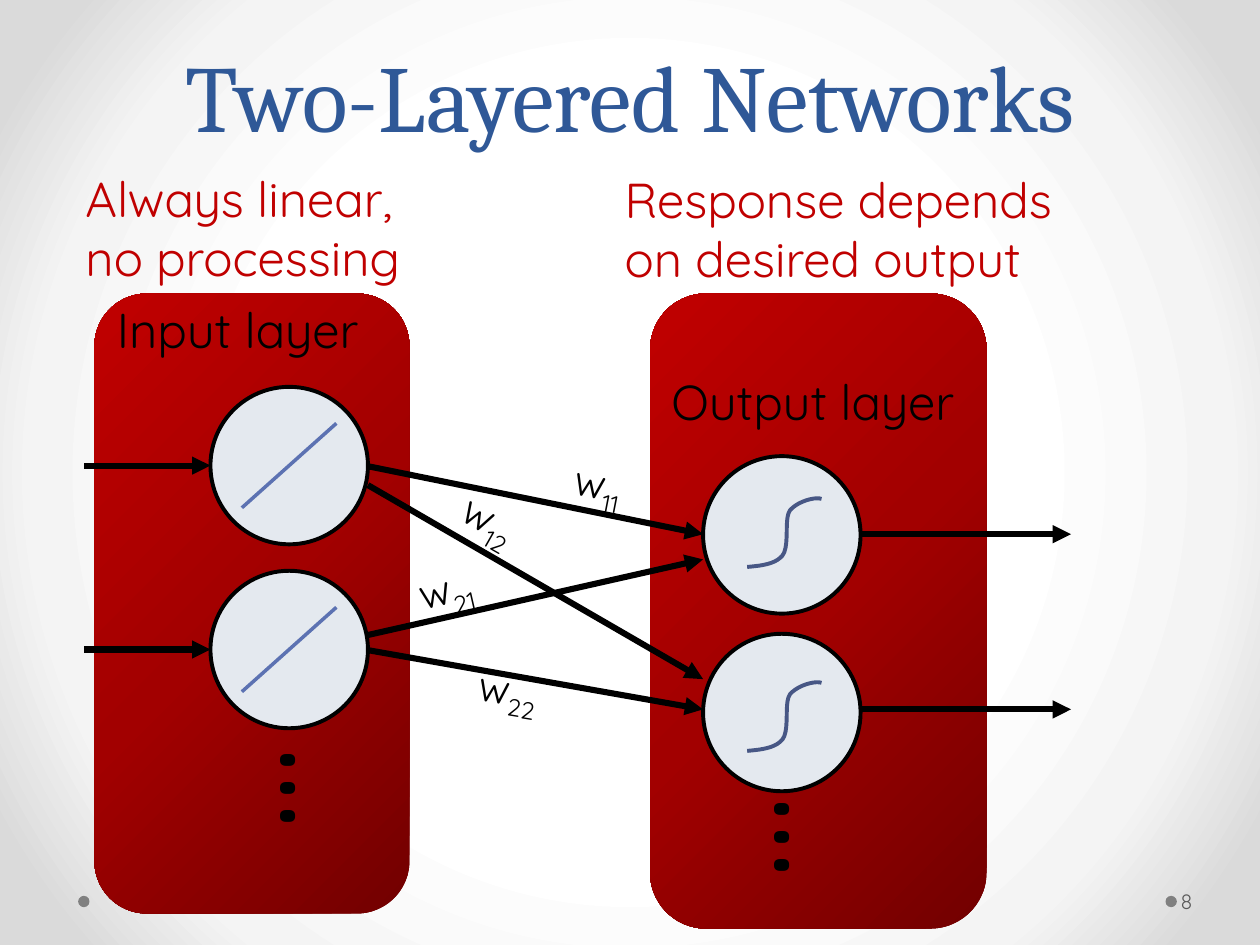
"""Build the slide on two-layered neural networks."""
from lxml.etree import SubElement
from pptx import Presentation
from pptx.dml.color import RGBColor
from pptx.enum.shapes import MSO_CONNECTOR as CXN, MSO_SHAPE as SHAPE
from pptx.enum.text import MSO_ANCHOR as ANCHOR, MSO_AUTO_SIZE as AUTO, PP_ALIGN as ALIGN
from pptx.oxml import parse_xml
from pptx.oxml.ns import nsdecls, qn
from pptx.util import Inches, Pt

COLORS = {
    "title": "2F5897", "accent": "C00000", "text": "000000", "number": "595959",
    "dot": "808080", "node": "E4E9EF", "linear": "5C72B2", "sigmoid": "475785",
}
PANEL_STOPS = [(0, "720000"), (50, "A20000"), (100, "C00000")]
PAGE_STOPS = [(50, "FFFFFF"), (76, "F4F4F4"), (92, "DADADA")]
PANEL_DIRECTION = '<a:lin ang="13500000" scaled="0"/>'
PAGE_DIRECTION = ('<a:path path="circle"><a:fillToRect l="50000" t="50000" '
                  'r="50000" b="50000"/></a:path>')
HEADING = {"name": "Cambria", "size": Pt(54)}
LABEL = {"name": "Quicksand", "size": Pt(28)}
WEIGHT = {"name": "Quicksand", "size": Pt(24)}
ELLIPSIS = {"name": "Quicksand", "size": Pt(88)}
NUMBER = {"name": "Quicksand", "size": Pt(12)}
NODE = 1.25
INPUT_X, OUTPUT_X = 1.67, 5.58
INPUT_TOPS, OUTPUT_TOPS = (3.07, 4.53), (3.62, 5.03)
SIGMOID_TOPS = (3.96, 5.42)
SIGMOID = [
    [(0, 0.54), (0.11, 0.53), (0.22, 0.52), (0.28, 0.45)],
    [(0.28, 0.45), (0.34, 0.37), (0.29, 0.16), (0.34, 0.09)],
    [(0.34, 0.09), (0.4, 0.02), (0.54, -0.02), (0.59, 0)],
]


def rgb(name):
    """Return the named colour."""
    return RGBColor.from_string(COLORS[name])


def gradient(stops, direction):
    """Return a gradient fill element."""
    marks = "".join(f'<a:gs pos="{pos * 1000}"><a:srgbClr val="{color}"/></a:gs>'
                    for pos, color in stops)
    return parse_xml(f'<a:gradFill {nsdecls("a")} rotWithShape="1">'
                     f'<a:gsLst>{marks}</a:gsLst>{direction}</a:gradFill>')


def set_background(s):
    """Give the slide a radial background."""
    s.background.fill.solid()
    bg_pr = s.background.fill._xPr
    bg_pr.replace(bg_pr.find(qn("a:solidFill")), gradient(PAGE_STOPS, PAGE_DIRECTION))


def add_run(p, text, fmt, color):
    """Add a formatted run to a paragraph."""
    r = p.add_run()
    r.text = text
    for key, value in fmt.items():
        setattr(r.font, key, value)
    r.font.color.rgb = rgb(color)
    return r


def add_title(s, text):
    """Fill and place the title placeholder."""
    sp = s.shapes.title
    sp.left, sp.top, sp.width, sp.height = map(Inches, (0.5, 0, 9, 1.25))
    tf = sp.text_frame
    tf.vertical_anchor = ANCHOR.BOTTOM
    p = tf.paragraphs[0]
    p.alignment, p.line_spacing = ALIGN.CENTER, Pt(58)
    add_run(p, text, HEADING, "title")


def add_text(s, box, text, fmt, color="text", rotation=0, sub=""):
    """Add a text box, with an optional subscript."""
    sp = s.shapes.add_textbox(*map(Inches, box))
    sp.rotation = rotation
    tf = sp.text_frame
    tf.word_wrap, tf.auto_size = True, AUTO.SHAPE_TO_FIT_TEXT
    p = tf.paragraphs[0]
    add_run(p, text, fmt, color)
    if sub:
        r = add_run(p, sub, fmt, color)
        r.font._element.set("baseline", "-25000")
    return tf


def add_page_number(s, text):
    """Add the page number."""
    tf = add_text(s, (9.34, 6.95, 0.61, 0.4), text, NUMBER, "number")
    tf.auto_size, tf.vertical_anchor = AUTO.NONE, ANCHOR.MIDDLE
    tf.margin_left, tf.margin_right = Inches(0.03), Inches(0.05)


def add_panel(s, box):
    """Add a rounded layer panel with a gradient."""
    sp = s.shapes.add_shape(SHAPE.ROUNDED_RECTANGLE, *map(Inches, box))
    sp.shadow.inherit = False
    sp.line.fill.background()
    sp.fill.solid()
    sp_pr = sp._element.spPr
    sp_pr.replace(sp_pr.find(qn("a:solidFill")), gradient(PANEL_STOPS, PANEL_DIRECTION))


def add_circle(s, x, y, size, fill, outlined=False):
    """Add a filled circle."""
    sp = s.shapes.add_shape(SHAPE.OVAL, *map(Inches, (x, y, size, size)))
    sp.shadow.inherit = False
    sp.fill.solid()
    sp.fill.fore_color.rgb = rgb(fill)
    if outlined:
        sp.line.color.rgb, sp.line.width = rgb("text"), Pt(2.25)
    else:
        sp.line.fill.background()


def add_line(s, start, end, color="text", width=3.5, arrow=True):
    """Add a straight line, with an arrowhead by default."""
    cxn = s.shapes.add_connector(CXN.STRAIGHT, *map(Inches, (*start, *end)))
    cxn.line.color.rgb, cxn.line.width = rgb(color), Pt(width)
    if arrow:
        SubElement(cxn.line._get_or_add_ln(), qn("a:tailEnd"), type="triangle")
    SubElement(cxn._element.spPr, qn("a:effectLst"))


def bezier(points, t):
    """Return the point at t on a cubic curve."""
    factors = ((1 - t) ** 3, 3 * t * (1 - t) ** 2, 3 * t * t * (1 - t), t ** 3)
    return tuple(sum(f * pt[axis] for f, pt in zip(factors, points)) for axis in (0, 1))


def add_sigmoid(s, x, y, steps=10):
    """Add an S-shaped response curve."""
    curve = [SIGMOID[0][0]] + [bezier(part, i / steps)
                               for part in SIGMOID for i in range(1, steps + 1)]
    points = [(Inches(x + dx), Inches(y + dy)) for dx, dy in curve]
    builder = s.shapes.build_freeform(*points[0])
    builder.add_line_segments(points[1:], close=False)
    sp = builder.convert_to_shape()
    sp.shadow.inherit = False
    sp.fill.background()
    sp.line.color.rgb, sp.line.width = rgb("sigmoid"), Pt(2.25)


def main():
    """Build and save the slide."""
    prs = Presentation()
    prs.slide_width, prs.slide_height = Inches(10), Inches(7.5)
    s = prs.slides.add_slide(prs.slide_layouts[5])
    set_background(s)
    for x in (9.25, 0.62):
        add_circle(s, x, 7.11, 0.09, "dot")
    for box in ((5.16, 2.33, 2.67, 5.04), (0.75, 2.33, 2.5, 4.92)):
        add_panel(s, box)
    add_title(s, "Two-Layered Networks")
    add_page_number(s, "8")

    for top in INPUT_TOPS:
        middle = top + NODE / 2
        add_circle(s, INPUT_X, top, NODE, "node", outlined=True)
        add_line(s, (1.92, top + 0.96), (2.67, top + 0.29), "linear", 2, arrow=False)
        add_line(s, (0.67, middle), (INPUT_X, middle))
    for top, curve_top, y in zip(OUTPUT_TOPS, SIGMOID_TOPS, (4.24, 5.63)):
        add_circle(s, OUTPUT_X, top, NODE, "node", outlined=True)
        add_sigmoid(s, 5.93, curve_top)
        add_line(s, (OUTPUT_X + NODE, y), (8.5, y))
    for start_y, end_y in ((3.7, 4.24), (3.85, 5.39), (5.04, 4.44), (5.16, 5.63)):
        add_line(s, (INPUT_X + NODE, start_y), (OUTPUT_X, end_y))

    for sub, box, rotation in (
        ("11", (4.46, 3.6, 0.74, 0.5), 11.1),
        ("12", (3.57, 3.91, 0.8, 0.5), 29.7),
        ("21", (3.22, 4.41, 0.73, 0.5), 347),
        ("22", (3.69, 5.35, 2.34, 0.5), 9.2),
    ):
        add_text(s, box, "w", WEIGHT, rotation=rotation, sub=sub)
    for x, y in ((2.06, 5.68), (5.98, 6.07)):
        add_text(s, (x, y, 1.29, 1.58), "...", ELLIPSIS, rotation=90)
    for text, box, color in (
        ("Input layer", (0.83, 2.33, 2.33, 0.57), "text"),
        ("Output layer", (5.23, 2.9, 2.79, 0.57), "text"),
        ("Always linear, no processing", (0.58, 1.29, 3.01, 1.04), "accent"),
        ("Response depends on desired output", (4.86, 1.3, 4.05, 1.04), "accent"),
    ):
        add_text(s, box, text, LABEL, color)
    prs.save("out.pptx")


if __name__ == "__main__":
    main()
